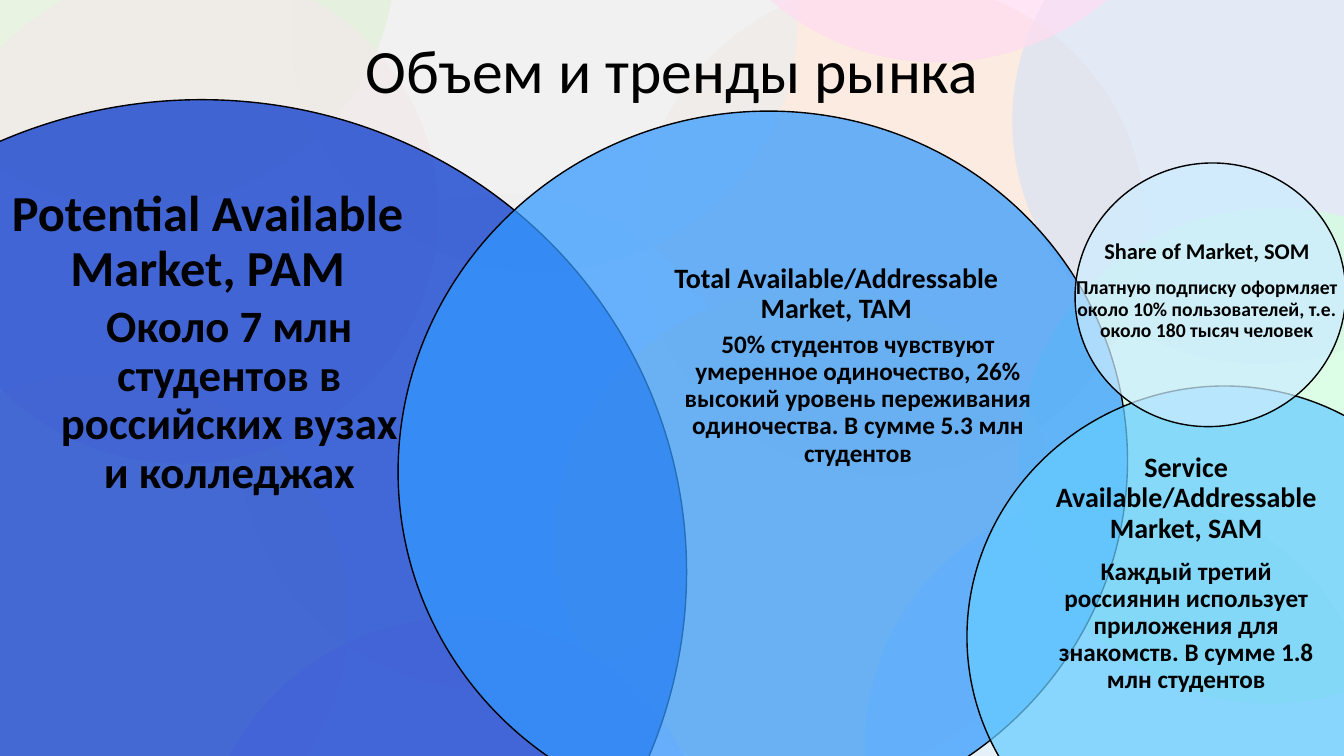
from lxml import etree
from pptx import Presentation
from pptx.dml.color import RGBColor
from pptx.enum.shapes import MSO_SHAPE
from pptx.enum.text import MSO_ANCHOR, MSO_AUTO_SIZE, PP_ALIGN
from pptx.oxml.ns import qn
from pptx.util import Inches, Pt

OVAL = MSO_SHAPE.OVAL
CENTER = PP_ALIGN.CENTER
MIDDLE = MSO_ANCHOR.MIDDLE
FIT_SHAPE = MSO_AUTO_SIZE.SHAPE_TO_FIT_TEXT
NO_FIT = MSO_AUTO_SIZE.NONE
BLACK = RGBColor(0, 0, 0)
FONT = "Calibri"
TILT = 74.5
SPOT_SIZE = (4.91, 5.04)

TITLE = "Объем и тренды рынка"
TITLE_BOX = (0.92, 0, 11.5, 1.45)

# left, top, size, colour, opacity in percent
SPOTS = [
    (6.39, -0.26, SPOT_SIZE, RGBColor(0xFB, 0xE5, 0xD6), 74),
    (10.1, -1.33, (4.87, 5), RGBColor(0xDA, 0xE3, 0xF3), 74),
    (2.44, 1.86, SPOT_SIZE, RGBColor(0xF2, 0xF2, 0xF2), 74),
    (2.94, -2.28, SPOT_SIZE, RGBColor(0xED, 0xED, 0xED), 74),
    (5.56, 2.79, SPOT_SIZE, RGBColor(0xFF, 0xF2, 0xCC), 74),
    (8.64, 4.83, SPOT_SIZE, RGBColor(0xDE, 0xEB, 0xF7), 74),
    (-1.05, -2.91, SPOT_SIZE, RGBColor(0xE2, 0xF0, 0xD9), 74),
    (10.16, 2, SPOT_SIZE, RGBColor(0xD2, 0xFE, 0xDE), 74),
    (6.88, -4.36, SPOT_SIZE, RGBColor(0xFF, 0xDD, 0xF2), 74),
    (-1.52, 3.65, SPOT_SIZE, RGBColor(0xFE, 0xFB, 0xDE), 73),
    (-0.62, -0.38, SPOT_SIZE, RGBColor(0xF2, 0xEA, 0xEA), 74),
    (2.06, 6.07, SPOT_SIZE, RGBColor(0xF4, 0xE5, 0xF7), 73),
]

# circle as above, text box, paragraphs of (text, size, space before, indent)
MARKETS = [
    ((-2.83, 0.85, (9.5, 9.8), RGBColor(0x00, 0x33, 0xCC), 73),
     (-0.08, 1.82, 4.28, 3.2),
     [("Potential Available Market, PAM", 36, 10, 0),
      ("Около 7 млн студентов в российских вузах и колледжах", 32, 5, 0.43)]),
    ((4.05, 1, (7.03, 7.25), RGBColor(0x33, 0x99, 0xFF), 73),
     (6.26, 2.57, 4.07, 2.14),
     [("Total Available/Addressable Market, TAM", 20, 10, 0),
      ("50% студентов чувствуют умеренное одиночество, 26% высокий уровень "
       "переживания одиночества. В сумме 5.3 млн студентов", 18, 5, 0.43)]),
    ((9.66, 3.76, (4.89, 5.04), RGBColor(0x66, 0xCC, 0xFF), 73),
     (10.26, 4.45, 3.01, 2.51),
     [("Service Available/Addressable Market, SAM", 20, 10, 0),
      ("Каждый третий россиянин использует приложения для знакомств. "
       "В сумме 1.8 млн студентов", 18, 10, 0)]),
    ((10.7, 1.58, (2.61, 2.69), RGBColor(0xCC, 0xEC, 0xFF), 72),
     (10.48, 2.33, 2.98, 1.12),
     [("Share of Market, SOM", 16, 10, 0),
      ("Платную подписку оформляет около 10% пользователей, т.е. "
       "около 180 тысяч человек", 14, 10, 0)]),
]


def set_attrs(target, values):
    for name, value in values.items():
        setattr(target, name, value)


def add_circle(s, left, top, size, color, opacity, outlined=False):
    sp = s.shapes.add_shape(OVAL, *map(Inches, (left, top, *size)))
    sp.rotation = TILT
    sp.shadow.inherit = False
    sp.fill.solid()
    sp.fill.fore_color.rgb = color
    clr = sp.element.spPr.find(qn("a:solidFill")).find(qn("a:srgbClr"))
    etree.SubElement(clr, qn("a:alpha")).set("val", str(opacity * 1000))
    if outlined:
        sp.line.color.rgb = BLACK
        sp.line.width = Pt(1)
    else:
        sp.line.fill.background()


def write_paragraph(p, text, size, before=0, indent=0, bold=False):
    set_attrs(p, {"alignment": CENTER, "line_spacing": 0.9, "space_before": Pt(before)})
    if indent:
        p._p.get_or_add_pPr().set("marL", str(Inches(indent)))
    r = p.add_run()
    r.text = text
    set_attrs(r.font, {"name": FONT, "size": Pt(size), "bold": bold})
    r.font.color.rgb = BLACK


def add_label(s, box, paragraphs):
    tf = s.shapes.add_textbox(*map(Inches, box)).text_frame
    set_attrs(tf, {"word_wrap": True, "auto_size": FIT_SHAPE})
    for i, (text, size, before, indent) in enumerate(paragraphs):
        p = tf.add_paragraph() if i else tf.paragraphs[0]
        write_paragraph(p, text, size, before, indent, bold=True)


def add_title(s):
    """Fill the title placeholder and bring it in front of the shapes so far."""
    title = s.shapes.title
    set_attrs(title, dict(zip(("left", "top", "width", "height"), map(Inches, TITLE_BOX))))
    tf = title.text_frame
    set_attrs(tf, {"vertical_anchor": MIDDLE, "auto_size": NO_FIT, "word_wrap": True})
    write_paragraph(tf.paragraphs[0], TITLE, 44)
    s.shapes.element.append(title.element)


def main():
    prs = Presentation()
    prs.slide_width, prs.slide_height = Inches(13.33), Inches(7.5)
    s = prs.slides.add_slide(prs.slide_layouts[5])
    for spot in SPOTS:
        add_circle(s, *spot)
    add_title(s)
    for circle, box, paragraphs in MARKETS:
        add_circle(s, *circle, outlined=True)
        add_label(s, box, paragraphs)
    prs.save("out.pptx")


if __name__ == "__main__":
    main()
